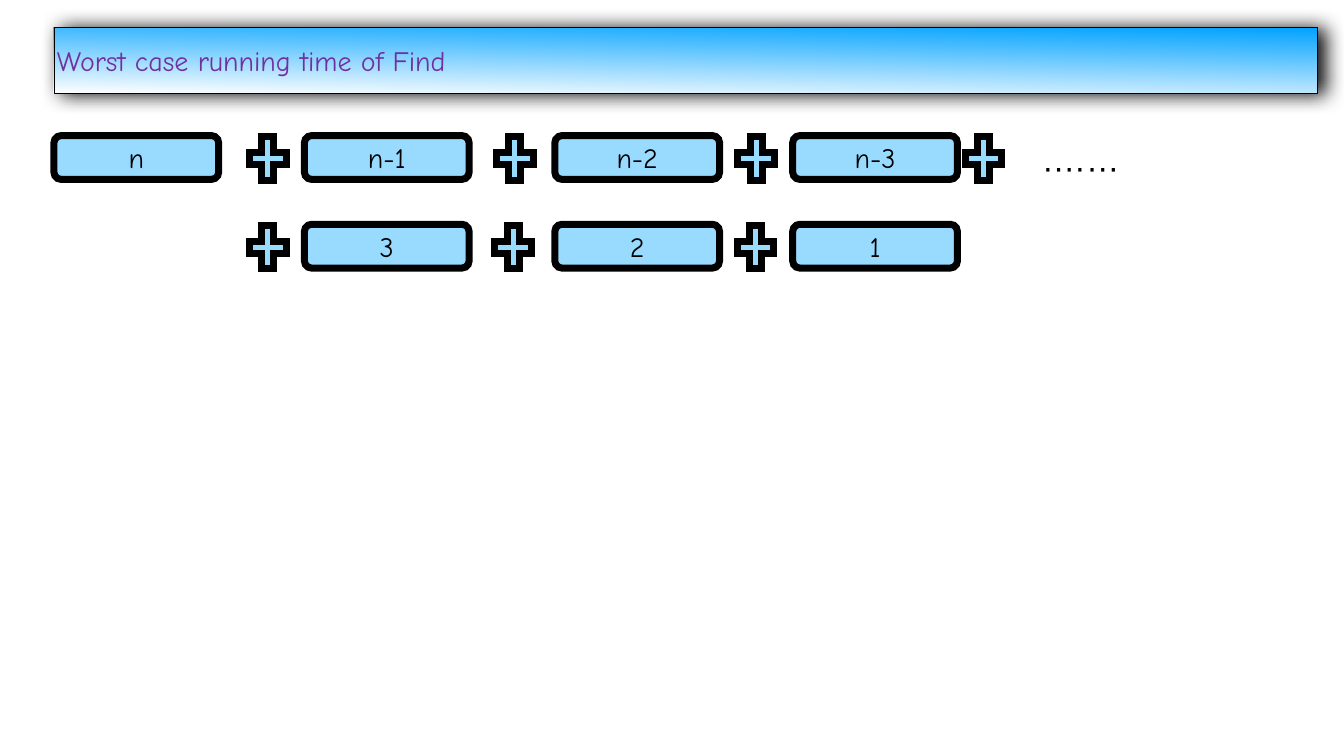
from dataclasses import dataclass
from lxml.etree import SubElement
from pptx import Presentation
from pptx.dml.color import RGBColor
from pptx.enum.shapes import MSO_SHAPE
from pptx.enum.text import MSO_ANCHOR, MSO_AUTO_SIZE, PP_ALIGN
from pptx.oxml import parse_xml
from pptx.oxml.ns import nsdecls, qn
from pptx.util import Inches, Pt


@dataclass(frozen=True)
class Theme:
    """Colours, fonts and type sizes of the slide."""
    ink: RGBColor = RGBColor(0, 0, 0)
    cell: RGBColor = RGBColor(0x99, 0xDA, 0xFF)
    band: RGBColor = RGBColor(0x00, 0xA2, 0xFF)
    paper: RGBColor = RGBColor(0xFF, 0xFF, 0xFF)
    title: RGBColor = RGBColor(0x70, 0x30, 0xA0)
    font: str = "Comic Neue"
    plain: str = "Arial"
    size: int = 40
    large: int = 48
    edge: int = 10


THEME = Theme()


def write(shape, text, font, size, color, align, fit, wrap=True):
    """Put one styled paragraph in a shape and return it."""
    frame = shape.text_frame
    frame.text = text
    frame.word_wrap = wrap
    frame.auto_size = fit
    frame.vertical_anchor = MSO_ANCHOR.MIDDLE
    frame.margin_left = frame.margin_right = Inches(0.06)
    frame.margin_top = frame.margin_bottom = Inches(0.06)
    para = frame.paragraphs[0]
    para.alignment = align
    para.font.name = font
    para.font.size = Pt(size)
    para.font.color.rgb = color
    return para


def place(shape, box):
    """Move a shape to a box given in inches."""
    shape.left, shape.top, shape.width, shape.height = map(Inches, box)


def add_title(slide, box, text):
    """Turn the title placeholder into a shaded, rounded banner."""
    title = slide.shapes.title
    place(title, box)
    props = title._element.spPr
    props.append(parse_xml(
        f'<a:prstGeom {nsdecls("a")} prst="roundRect"><a:avLst>'
        '<a:gd name="adj" fmla="val 5900"/></a:avLst></a:prstGeom>'))
    title.fill.gradient()
    title.fill.gradient_angle = 269
    for stop, color in zip(title.fill.gradient_stops, (THEME.band, THEME.paper)):
        stop.color.rgb = color
    title.line.color.rgb = THEME.ink
    title.line.width = Pt(1)
    props.append(parse_xml(
        f'<a:effectLst {nsdecls("a")}><a:outerShdw blurRad="{Pt(28)}" '
        f'dist="{Pt(9)}" dir="0" rotWithShape="0"><a:srgbClr val="{THEME.ink}">'
        '<a:alpha val="97000"/></a:srgbClr></a:outerShdw></a:effectLst>'))
    write(title, text, THEME.font, THEME.size, THEME.title,
          PP_ALIGN.LEFT, MSO_AUTO_SIZE.NONE)


def add_block(slide, kind, box):
    """Add a light blue shape with a heavy, sharp edge."""
    shape = slide.shapes.add_shape(kind, *map(Inches, box))
    shape.shadow.inherit = False
    shape.fill.solid()
    shape.fill.fore_color.rgb = THEME.cell
    shape.line.color.rgb = THEME.ink
    shape.line.width = Pt(THEME.edge)
    SubElement(shape.line._get_or_add_ln(), qn("a:miter"), lim="800000")
    return shape


def add_row(slide, top, terms, signs):
    """Add a row of terms and plus signs, each at its left edge."""
    for left, text in terms:
        shape = add_block(slide, MSO_SHAPE.ROUNDED_RECTANGLE,
                          (left, top, 3.27, 0.87))
        write(shape, text, THEME.font, THEME.size, THEME.ink,
              PP_ALIGN.CENTER, MSO_AUTO_SIZE.SHAPE_TO_FIT_TEXT)
    for left in signs:
        add_block(slide, MSO_SHAPE.MATH_PLUS, (left, top - 0.13, 0.99, 1.17))


def add_dots(slide, box, text):
    """Add the dots that stand for the terms between the rows."""
    shape = slide.shapes.add_textbox(*map(Inches, box))
    shape.rotation = 180
    para = write(shape, text, THEME.plain, THEME.large, THEME.ink,
                 PP_ALIGN.LEFT, MSO_AUTO_SIZE.SHAPE_TO_FIT_TEXT, False)
    para.line_spacing = 0.9
    para.space_before = Pt(45)


def main():
    """Build and save the slide."""
    deck = Presentation()
    deck.slide_width, deck.slide_height = Inches(26.67), Inches(15)
    slide = deck.slides.add_slide(deck.slide_layouts.get_by_name("Title Only"))
    cols = (1.07, 6.04, 11.01, 15.73)
    add_title(slide, (1.07, 0.54, 25.08, 1.32), "Worst case running time of Find")
    add_row(slide, 2.69, zip(cols, ("n", "n-1", "n-2", "n-3")),
            (4.82, 9.72, 14.51, 19.02))
    add_dots(slide, (20.63, 2.83, 1.65, 1.47), "…….")
    add_row(slide, 4.45, zip(cols[1:], "321"), (4.82, 9.69, 14.5))
    deck.save("out.pptx")


if __name__ == "__main__":
    main()
